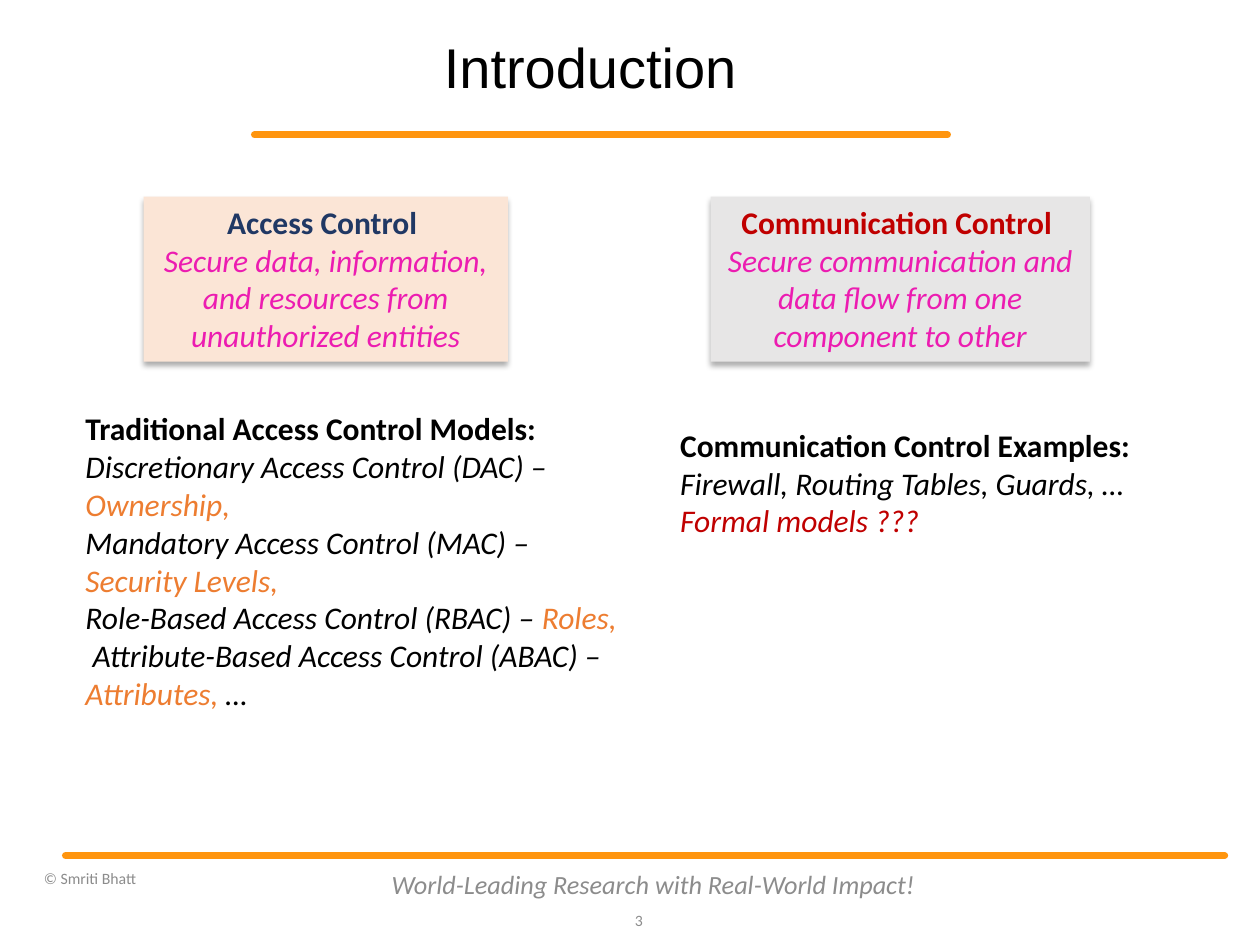
from dataclasses import dataclass

from lxml import etree
from pptx import Presentation
from pptx.dml.color import RGBColor
from pptx.enum.shapes import MSO_CONNECTOR, MSO_SHAPE
from pptx.enum.text import MSO_ANCHOR, PP_ALIGN
from pptx.oxml import parse_xml
from pptx.oxml.ns import nsdecls, qn
from pptx.util import Pt

STRAIGHT, RECT = MSO_CONNECTOR.STRAIGHT, MSO_SHAPE.RECTANGLE
TOP, MIDDLE, BOTTOM = MSO_ANCHOR.TOP, MSO_ANCHOR.MIDDLE, MSO_ANCHOR.BOTTOM
LEFT, CENTER, RIGHT = PP_ALIGN.LEFT, PP_ALIGN.CENTER, PP_ALIGN.RIGHT
EMU_PER_PX = 9144


@dataclass(frozen=True)
class Theme:
    """Colours, fonts and type sizes of the slide."""
    rule: str = "FF950E"
    ink: str = "000000"
    muted: str = "8C8C8C"
    navy: str = "203864"
    red: str = "C00000"
    pink: str = "EC1CB1"
    orange: str = "ED7D31"
    peach: str = "FBE5D6"
    grey: str = "E7E6E6"
    heading_font: str = "Arial"
    body_font: str = "Calibri"
    title: int = 32
    body: int = 18
    motto: int = 15
    small: int = 9
    rule_width: int = 4


THEME = Theme()
HEAD = {"bold": True}
NOTE = {"italic": True}
TERM = {"italic": True, "color": THEME.orange}
SHADOW = (
    f'<a:effectLst {nsdecls("a")}><a:outerShdw blurRad="44450" dist="27940" dir="5400000" '
    'algn="ctr" rotWithShape="0"><a:srgbClr val="000000"><a:alpha val="32000"/>'
    "</a:srgbClr></a:outerShdw></a:effectLst>"
)


def px(*lengths):
    """Turn px lengths into EMU."""
    return [n * EMU_PER_PX for n in lengths]


def fill_text(sp, paragraphs, align=LEFT, anchor=TOP, spacing=None, **base):
    """Write paragraphs of (text, format) runs into a shape."""
    tf = sp.text_frame
    tf.word_wrap = True
    tf.vertical_anchor = anchor
    for i, runs in enumerate(paragraphs):
        p = tf.paragraphs[0] if i == 0 else tf.add_paragraph()
        p.alignment = align
        p.line_spacing = spacing
        for text, extra in runs:
            r = p.add_run()
            r.text = text
            fmt = {"name": THEME.body_font, "size": THEME.body, "color": THEME.ink, **base, **extra}
            r.font.color.rgb = RGBColor.from_string(fmt.pop("color"))
            fmt["size"] = Pt(fmt["size"])
            for key, value in fmt.items():
                setattr(r.font, key, value)


def add_text(s, box, paragraphs, **options):
    """Add a wrapped text box."""
    fill_text(s.shapes.add_textbox(*px(*box)), paragraphs, **options)


def add_card(s, box, fill, paragraphs):
    """Add a filled rectangle with a soft shadow and centred text."""
    sp = s.shapes.add_shape(RECT, *px(*box))
    sp.fill.solid()
    sp.fill.fore_color.rgb = RGBColor.from_string(fill)
    sp.line.fill.background()
    sp._element.spPr.append(parse_xml(SHADOW))
    fill_text(sp, paragraphs, align=CENTER)


def add_rule(s, left, right, y):
    """Add a horizontal rule with round ends."""
    rule = s.shapes.add_connector(STRAIGHT, *px(left, y, right, y))
    rule.line.color.rgb = RGBColor.from_string(THEME.rule)
    rule.line.width = Pt(THEME.rule_width)
    rule.line._get_or_add_ln().set("cap", "rnd")
    etree.SubElement(rule._element.spPr, qn("a:effectLst"))


def add_footer(s):
    """Add the page number, motto and copyright line."""
    for box, text, align, fmt in [
        ((480, 710, 40, 40), "3", RIGHT, {"size": THEME.small}),
        ((300, 682, 437, 40), "World-Leading Research with Real-World Impact!", CENTER,
         {"size": THEME.motto, "italic": True}),
        ((25, 679, 275, 36), "© Smriti Bhatt", LEFT, {"size": THEME.small}),
    ]:
        add_text(s, box, [[(text, fmt)]], align=align, anchor=MIDDLE, color=THEME.muted)


def main():
    """Build and save the slide."""
    prs = Presentation()
    prs.slide_width, prs.slide_height = px(1000, 750)
    s = prs.slides.add_slide(prs.slide_layouts[6])

    add_rule(s, 202, 752, 107)
    add_rule(s, 52, 972, 679)
    add_text(s, (199, 34, 539, 51), [[("Introduction", {})]], align=CENTER, anchor=BOTTOM,
             spacing=0.9, name=THEME.heading_font, size=THEME.title)
    add_footer(s)

    for left, width, fill, color, name, aim in [
        (114, 289, THEME.peach, THEME.navy, "Access Control ",
         "Secure data, information, and resources from unauthorized entities"),
        (564, 301, THEME.grey, THEME.red, "Communication Control ",
         "Secure communication and data flow from one component to other"),
    ]:
        add_card(s, (left, 156, width, 131), fill, [
            [(name, {**HEAD, "color": color})],
            [(aim, {**NOTE, "color": THEME.pink})],
        ])

    models = [
        ("Discretionary Access Control (DAC) – ", "Ownership,"),
        ("Mandatory Access Control (MAC) – ", "Security Levels,"),
        ("Role-Based Access Control (RBAC) – ", "Roles,"),
        (" Attribute-Based Access Control (ABAC) – ", "Attributes, "),
    ]
    lines = [[(model, NOTE), (basis, TERM)] for model, basis in models]
    lines[-1].append(("…", NOTE))
    add_text(s, (58, 320, 442, 313), [[("Traditional Access Control Models:", HEAD)], *lines])
    add_text(s, (530, 333, 413, 101), [
        [("Communication Control Examples: ", HEAD), ("Firewall, Routing Tables, Guards, …", NOTE)],
        [("Formal models ???", {**NOTE, "color": THEME.red})],
    ])
    prs.save("out.pptx")


if __name__ == "__main__":
    main()
